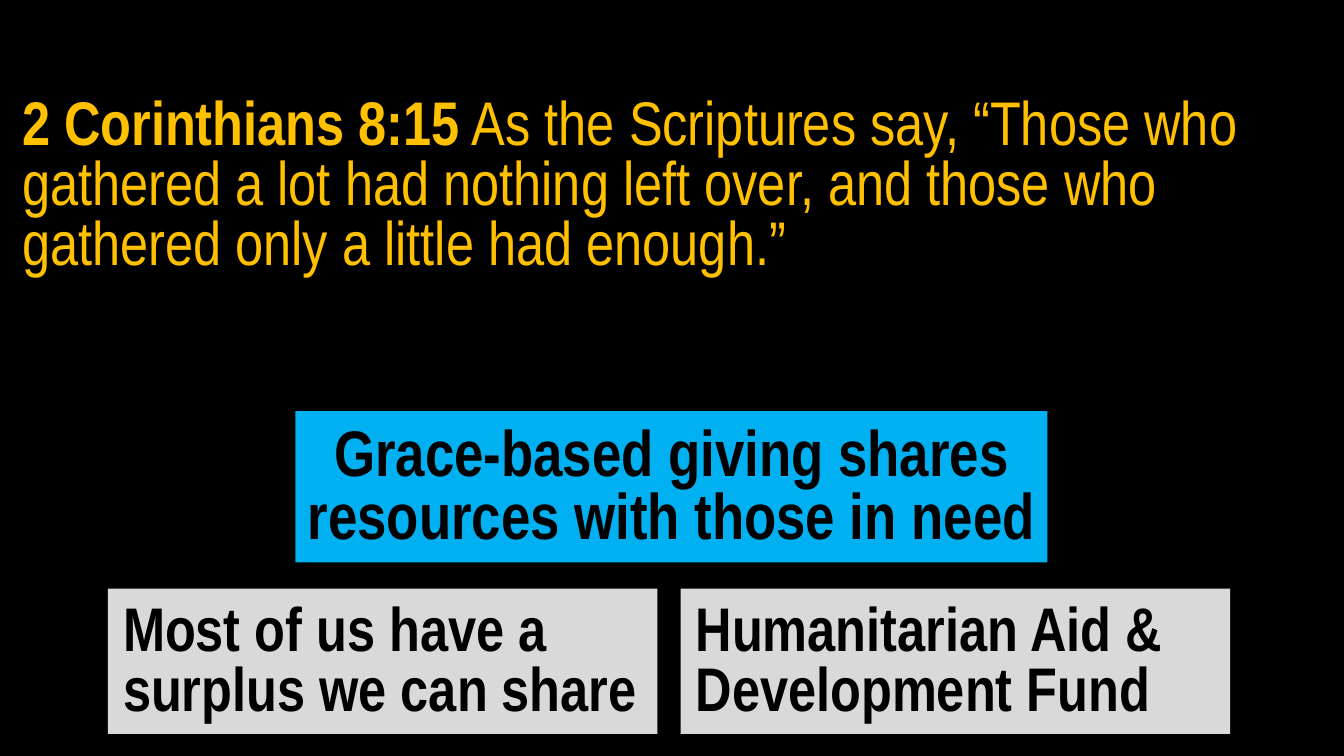
"""Build a scripture slide with a verse and three key-point boxes."""
from pptx import Presentation
from pptx.dml.color import RGBColor
from pptx.enum.shapes import MSO_SHAPE
from pptx.enum.text import MSO_ANCHOR, PP_ALIGN
from pptx.util import Inches, Pt

RECT = MSO_SHAPE.RECTANGLE
TOP = MSO_ANCHOR.TOP
LEFT, CENTER = PP_ALIGN.LEFT, PP_ALIGN.CENTER
BLACK = RGBColor(0x00, 0x00, 0x00)
GOLD = RGBColor(0xFF, 0xC0, 0x00)
GREY = RGBColor(0xD9, 0xD9, 0xD9)
BLUE = RGBColor(0x00, 0xB0, 0xF0)
FONT = "Arial Narrow"


def set_frame(tf, left_inset, top_inset):
    tf.word_wrap = True
    tf.vertical_anchor = TOP
    tf.margin_left, tf.margin_top = Inches(left_inset), Inches(top_inset)
    tf.margin_right = tf.margin_bottom = Inches(0.05)


def style_run(r, size, color, bold):
    r.font.name = FONT
    r.font.size = Pt(size)
    r.font.bold = bold
    r.font.color.rgb = color


prs = Presentation()
prs.slide_width, prs.slide_height = Inches(13.33), Inches(7.5)
s = prs.slides.add_slide(prs.slide_layouts[6])
s.background.fill.solid()
s.background.fill.fore_color.rgb = BLACK

verse = s.shapes.add_textbox(Inches(0.11), Inches(0.92), Inches(12.96), Inches(2.1))
set_frame(verse.text_frame, 0.11, 0.05)
p = verse.text_frame.paragraphs[0]
p.line_spacing = Pt(43)
p.space_after = Pt(12)
for text, bold in [
    ("2 Corinthians 8:15", True),
    (" As the Scriptures say, “Those who gathered a lot had nothing left over, "
     "and those who gathered only a little had enough.”", False),
]:
    r = p.add_run()
    r.text = text
    style_run(r, 44, GOLD, bold)

boxes = [
    ("Most of us have a surplus we can share", 1.07, 5.84, 5.45, 1.44, GREY, 44, LEFT, 0.15),
    ("Grace-based giving shares resources with those in need",
     2.93, 4.08, 7.46, 1.5, BLUE, 46, CENTER, 0.05),
    ("Humanitarian Aid & Development Fund", 6.75, 5.84, 5.45, 1.44, GREY, 44, LEFT, 0.15),
]
for text, x, y, w, h, fill, size, align, inset in boxes:
    sp = s.shapes.add_shape(RECT, Inches(x), Inches(y), Inches(w), Inches(h))
    sp.shadow.inherit = False
    sp.fill.solid()
    sp.fill.fore_color.rgb = fill
    sp.line.fill.background()
    set_frame(sp.text_frame, inset, 0.15)
    sp.text_frame.text = text
    p = sp.text_frame.paragraphs[0]
    p.alignment = align
    p.line_spacing = Pt(size - 1)
    style_run(p.runs[0], size, BLACK, True)

prs.save("out.pptx")
